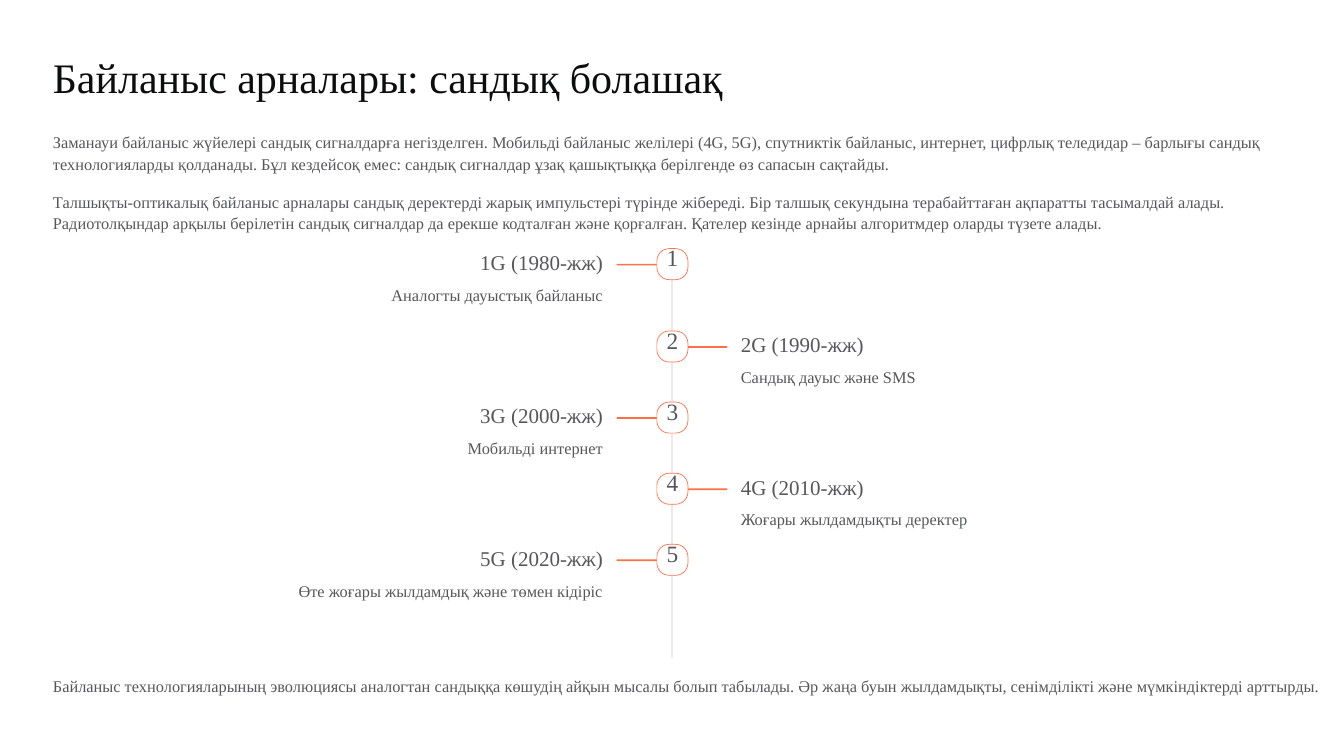
import pptx
import pptx.util
import pptx.dml.color
import pptx.enum.shapes
import pptx.enum.text
from lxml import etree

COLUMNS, ROWS = 16, 9
MARGIN = 0.63
CONTENT_WIDTH = 14.75
CENTER = COLUMNS / 2

COLORS = {
    "title": "0C0D0F",
    "body": "55575A",
    "accent": "FF7047",
    "paper": "FFFFFF",
    "rail": "000000",
}

INTRODUCTION = [
    "Заманауи байланыс жүйелері сандық сигналдарға негізделген. Мобильді байланыс "
    "желілері (4G, 5G), спутниктік байланыс, интернет, цифрлық теледидар – барлығы "
    "сандық технологияларды қолданады. Бұл кездейсоқ емес: сандық сигналдар ұзақ "
    "қашықтыққа берілгенде өз сапасын сақтайды.",
    "Талшықты-оптикалық байланыс арналары сандық деректерді жарық импульстері түрінде "
    "жібереді. Бір талшық секундына терабайттаған ақпаратты тасымалдай алады. "
    "Радиотолқындар арқылы берілетін сандық сигналдар да ерекше кодталған және "
    "қорғалған. Қателер кезінде арнайы алгоритмдер оларды түзете алады.",
]

GENERATIONS = [
    ("1G (1980-жж)", "Аналогты дауыстық байланыс"),
    ("2G (1990-жж)", "Сандық дауыс және SMS"),
    ("3G (2000-жж)", "Мобильді интернет"),
    ("4G (2010-жж)", "Жоғары жылдамдықты деректер"),
    ("5G (2020-жж)", "Өте жоғары жылдамдық және төмен кідіріс"),
]

CONCLUSION = (
    "Байланыс технологияларының эволюциясы аналогтан сандыққа көшудің айқын мысалы "
    "болып табылады. Әр жаңа буын жылдамдықты, сенімділікті және мүмкіндіктерді арттырды."
)


class TimelineSlide:
    """Draws on one slide; lengths are columns and rows of a 16 by 9 grid."""

    FONT = "Times New Roman"
    ALIGN = pptx.enum.text.PP_ALIGN

    def __init__(self, presentation):
        self.column = presentation.slide_width / COLUMNS
        self.row = presentation.slide_height / ROWS
        self.slide = presentation.slides.add_slide(presentation.slide_layouts[6])
        background = self.slide.background.fill
        background.solid()
        background.fore_color.rgb = self.color("paper")

    def color(self, name):
        return pptx.dml.color.RGBColor.from_string(COLORS[name])

    def place(self, left, top, width, height):
        return (round(left * self.column), round(top * self.row),
                round(width * self.column), round(height * self.row))

    def text(self, words, left, top, width, height, size=14, spacing=18.5,
             color="body", align=ALIGN.LEFT, wrap=False):
        box = self.slide.shapes.add_textbox(*self.place(left, top, width, height))
        frame = box.text_frame
        frame.word_wrap = wrap
        frame.margin_left = frame.margin_right = 0
        frame.margin_top = frame.margin_bottom = 0
        paragraph = frame.paragraphs[0]
        paragraph.alignment = align
        paragraph.line_spacing = pptx.util.Pt(spacing)
        run = paragraph.add_run()
        run.text = words
        run.font.name = self.FONT
        run.font.size = pptx.util.Pt(size)
        run.font.color.rgb = self.color(color)

    def rounded(self, left, top, width, height, fill, rounding=0.5, line=None, opacity=None):
        shape = self.slide.shapes.add_shape(
            pptx.enum.shapes.MSO_SHAPE.ROUNDED_RECTANGLE,
            *self.place(left, top, width, height))
        shape.adjustments[0] = rounding
        shape.shadow.inherit = False
        shape.fill.solid()
        shape.fill.fore_color.rgb = self.color(fill)
        if line:
            shape.line.color.rgb = self.color(line)
            shape.line.width = pptx.util.Pt(0.6)
        else:
            shape.line.fill.background()
        if opacity is not None:
            namespace = "{http://schemas.openxmlformats.org/drawingml/2006/main}"
            fill_color = shape.element.spPr.find(f"{namespace}solidFill/{namespace}srgbClr")
            etree.SubElement(fill_color, namespace + "alpha", val=str(opacity * 1000))

    def beside(self, on_left, gap, width):
        """Left edge of an element that starts a gap away from the centre."""
        return CENTER - gap - width if on_left else CENTER + gap

    def generation(self, number, heading, detail, top):
        on_left = number % 2 == 1
        align = self.ALIGN.RIGHT if on_left else self.ALIGN.LEFT
        self.rounded(self.beside(on_left, 0.17, 0.49), top + 0.18, 0.49, 0.02, "accent")
        self.rounded(CENTER - 0.18, top, 0.37, 0.37, "paper", 0.4, line="accent")
        self.text(str(number), CENTER - 0.12, top + 0.03, 0.25, 0.31,
                  size=20, spacing=17.5, align=self.ALIGN.CENTER)
        self.text(heading, self.beside(on_left, 0.82, 2.04), top + 0.06, 2.04, 0.26,
                  size=18, spacing=18, align=align)
        self.text(detail, self.beside(on_left, 0.82, 6.56), top + 0.41, 6.56, 0.26,
                  align=align)


def main():
    presentation = pptx.Presentation()
    presentation.slide_width = pptx.util.Inches(16)
    presentation.slide_height = pptx.util.Inches(9)
    timeline = TimelineSlide(presentation)

    timeline.text("Байланыс арналары: сандық болашақ", MARGIN, 0.71, 8.5, 0.51,
                  size=36, spacing=36.5, color="title")
    for index, words in enumerate(INTRODUCTION):
        timeline.text(words, MARGIN, 1.55 + 0.71 * index, CONTENT_WIDTH, 0.52, wrap=True)

    first_top, second_top, last_top = 2.96, 3.94, 6.48
    step = (last_top - second_top) / (len(GENERATIONS) - 2)
    timeline.rounded(CENTER - 0.01, first_top, 0.02, 4.88, "rail", opacity=8)
    for number, (heading, detail) in enumerate(GENERATIONS, start=1):
        top = first_top if number == 1 else second_top + step * (number - 2)
        timeline.generation(number, heading, detail, top)

    timeline.text(CONCLUSION, MARGIN, 8.03, COLUMNS - MARGIN, 0.26)
    presentation.save("out.pptx")


if __name__ == "__main__":
    main()
